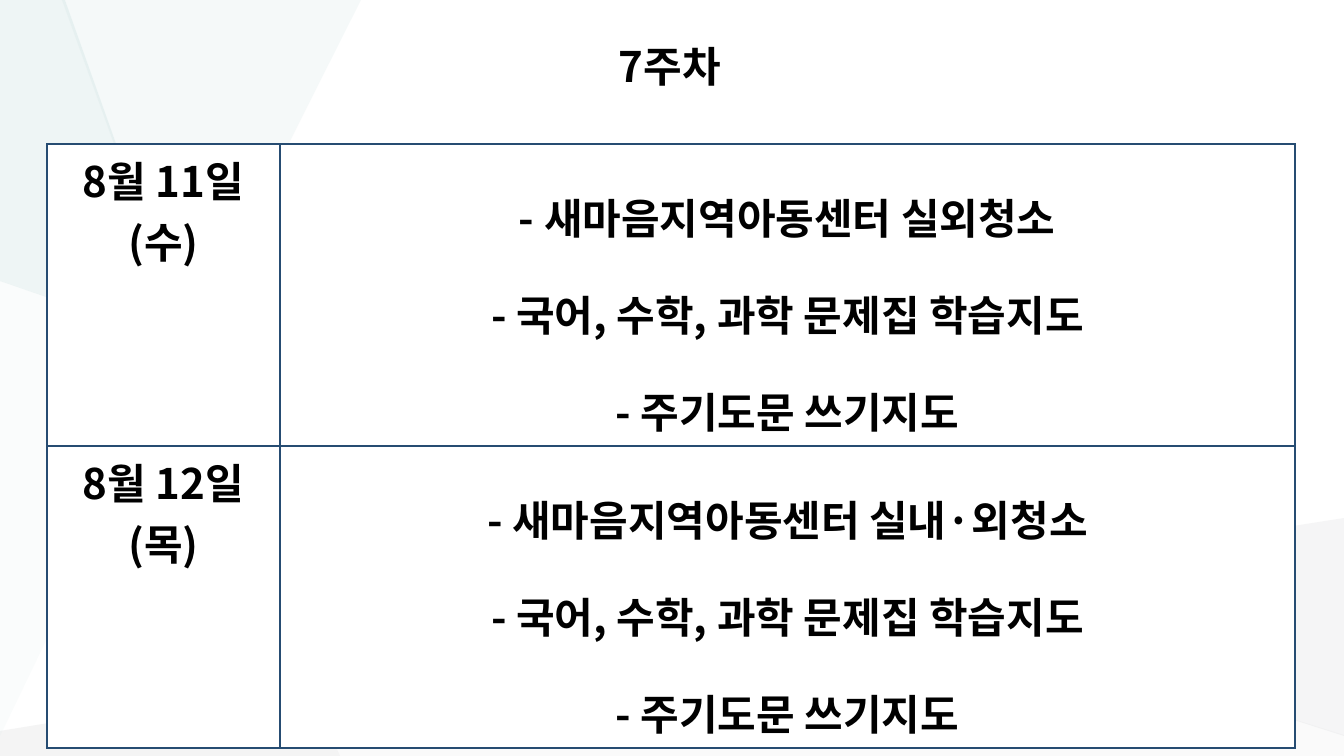
from dataclasses import dataclass, field

from lxml import etree
from pptx import Presentation
from pptx import util as u
from pptx.dml.color import RGBColor
from pptx.enum import text
from pptx.oxml import ns

SCALE = 914400 / 100.8  # EMU in one px


@dataclass
class Theme:
    ink: str = "000000"
    paper: str = "FFFFFF"
    rule: str = "264C72"
    rule_pt: int = 1
    lead: float = 1.6
    face: str = "Noto Sans CJK KR"
    font: dict = field(default_factory=lambda: {
        "size": u.Pt(30), "bold": True, "name": "Noto Sans CJK KR"})


THEME = Theme()

# Backdrop facets: colour, opacity in percent, corners in px
FACETS = [
    ("F3F2F2", 26, [(192, 347), (306, 681), (886, 590)]),
    ("B6B8BA", 15, [(306, 681), (0, 731), (0, 756), (340, 756)]),
    ("E0EDED", 31, [(361, 0), (62, 0), (187, 346)]),
    ("C6C8CA", 17, [(1344, 518), (886, 590), (1344, 736)]),
    ("B6B8BA", 6, [(886, 590), (307, 681), (340, 756), (1344, 756), (1344, 735)]),
    ("C1DBDB", 27, [(65, 0), (0, 0), (0, 281), (188, 346)]),
    ("C1DBDB", 8, [(0, 281), (0, 736), (188, 346)]),
]

STUDY = ["- 국어, 수학, 과학 문제집 학습지도", "- 주기도문 쓰기지도"]
DAYS = [
    (["8월 11일", "(수)"], ["- 새마음지역아동센터 실외청소", *STUDY]),
    (["8월 12일", "(목)"], ["- 새마음지역아동센터 실내·외청소", *STUDY]),
]


def px(n):
    return u.Emu(round(n * SCALE))


def rgb(code):
    return RGBColor.from_string(code)


def paint(fill, code):
    fill.solid()
    fill.fore_color.rgb = rgb(code)


def write(frame, lines, lead=None):
    """Fill a text frame with centred bold lines."""
    for i, line in enumerate(lines):
        para = frame.paragraphs[0] if i == 0 else frame.add_paragraph()
        para.alignment = text.PP_ALIGN.CENTER
        if lead:
            para.line_spacing = lead
        run = para.add_run()
        run.text = line
        run.font.color.rgb = rgb(THEME.ink)
        for key, val in THEME.font.items():
            setattr(run.font, key, val)
        props = run._r.get_or_add_rPr()
        etree.SubElement(props, ns.qn("a:ea"), typeface=THEME.face)


def facet(slide, code, alpha, spots):
    pen = slide.shapes.build_freeform(*spots[0], scale=SCALE)
    pen.add_line_segments(spots[1:], close=True)
    shape = pen.convert_to_shape()
    shape.shadow.inherit = False
    paint(shape.fill, code)
    shape.line.fill.background()
    tint = shape.fill._xPr.find(".//" + ns.qn("a:srgbClr"))
    etree.SubElement(tint, ns.qn("a:alpha"), val=str(alpha * 1000))


def title(slide, words, left, top, width, height):
    box = slide.shapes.add_textbox(*map(px, (left, top, width, height)))
    frame = box.text_frame
    frame.word_wrap = True
    frame.vertical_anchor = text.MSO_ANCHOR.MIDDLE
    write(frame, [words])


def border(cell):
    props = cell._tc.get_or_add_tcPr()
    for side in "LRTB":
        line = etree.SubElement(props, ns.qn("a:ln" + side),
                                w=str(u.Pt(THEME.rule_pt)))
        fill = etree.SubElement(line, ns.qn("a:solidFill"))
        etree.SubElement(fill, ns.qn("a:srgbClr"), val=THEME.rule)


def table(slide, days, left, top, widths, high):
    grid = slide.shapes.add_table(
        len(days), len(widths), px(left), px(top),
        px(sum(widths)), px(high * len(days))).table
    grid.first_row = grid.horz_banding = False
    for col, width in zip(grid.columns, widths):
        col.width = px(width)
    for row, day in zip(grid.rows, days):
        row.height = px(high)
        for cell, lines, lead in zip(row.cells, day, (None, THEME.lead)):
            border(cell)
            paint(cell.fill, THEME.paper)
            write(cell.text_frame, lines, lead)


def main():
    deck = Presentation()
    deck.slide_width, deck.slide_height = px(1344), px(756)
    slide = deck.slides.add_slide(deck.slide_layouts[6])
    paint(slide.background.fill, THEME.paper)

    # Backdrop
    for item in FACETS:
        facet(slide, *item)

    # Heading and schedule
    title(slide, "7주차", 47, 14, 1246, 104)
    table(slide, DAYS, 47, 144, (233, 1015), 302)

    deck.save("out.pptx")


if __name__ == "__main__":
    main()
